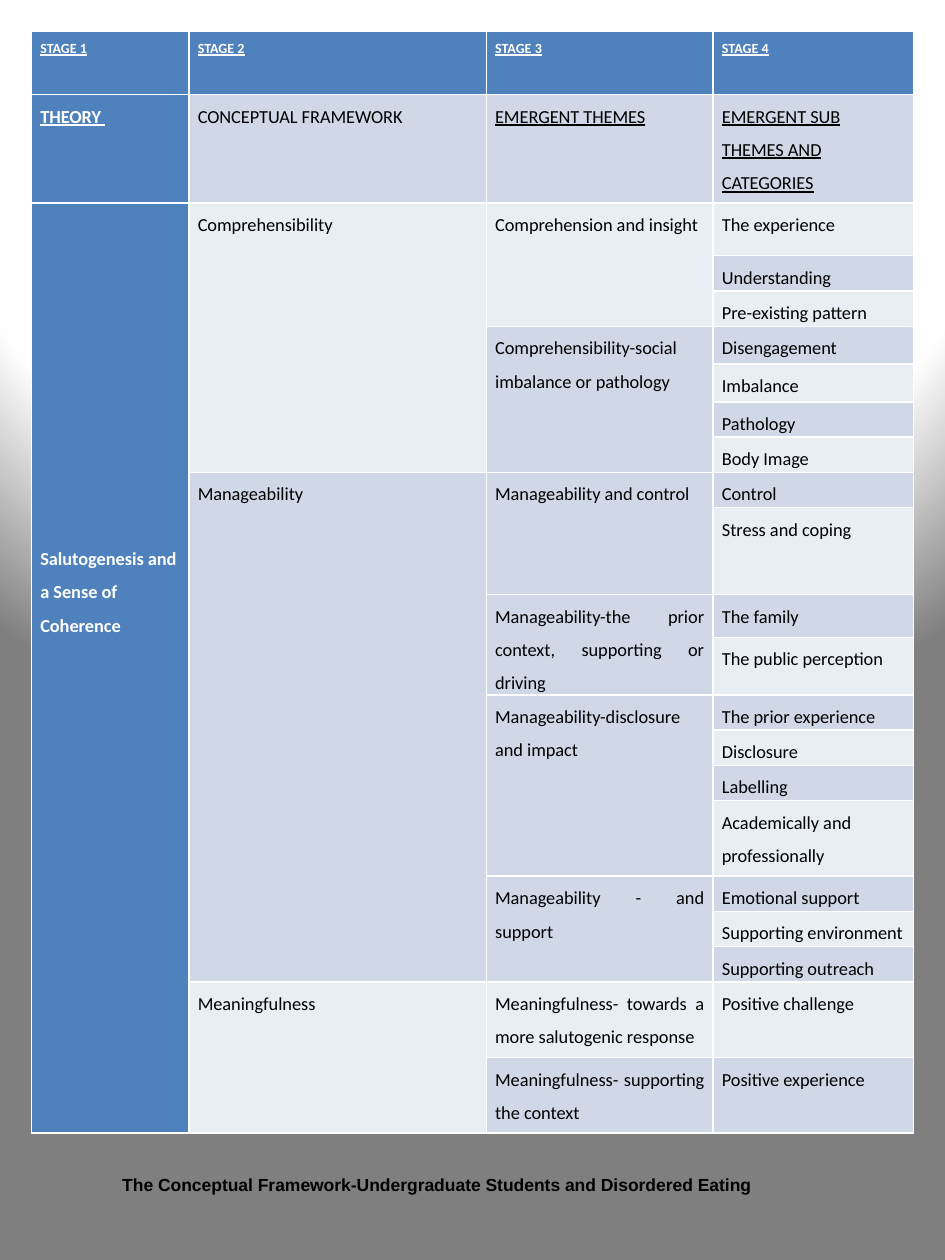
from pptx import Presentation
from pptx.dml.color import RGBColor
from pptx.enum import text
from pptx.oxml import parse_xml
from pptx.oxml.ns import nsdecls
from pptx.util import Inches, Pt

STAGES = ["STAGE 1", "STAGE 2", "STAGE 3", "STAGE 4"]
HEADS = ["THEORY ", "CONCEPTUAL FRAMEWORK", "EMERGENT THEMES",
         "EMERGENT SUB THEMES AND CATEGORIES"]
THEORY = "Salutogenesis and a Sense of Coherence"
# concept -> theme -> (sub-theme, row height)
TREE = {
    "Comprehensibility": {
        "Comprehension and insight": [
            ("The experience", 0.42), ("Understanding", 0.28),
            ("Pre-existing pattern", 0.28)],
        "Comprehensibility-social imbalance or pathology": [
            ("Disengagement", 0.3), ("Imbalance", 0.3),
            ("Pathology", 0.28), ("Body Image", 0.28)],
    },
    "Manageability": {
        "Manageability and control": [
            ("Control", 0.28), ("Stress and coping", 0.69)],
        "Manageability-the prior context, supporting or driving": [
            ("The family", 0.34), ("The public perception", 0.45)],
        "Manageability-disclosure and impact": [
            ("The prior experience", 0.28), ("Disclosure", 0.28),
            ("Labelling", 0.28), ("Academically and professionally", 0.6)],
        "Manageability - and support": [
            ("Emotional support", 0.28), ("Supporting environment", 0.28),
            ("Supporting outreach", 0.28)],
    },
    "Meaningfulness": {
        "Meaningfulness- towards a more salutogenic response": [
            ("Positive challenge", 0.6)],
        "Meaningfulness- supporting the context": [
            ("Positive experience", 0.6)],
    },
}
CAPTION = "The Conceptual Framework-Undergraduate Students and Disordered Eating"
WIDTHS = [1.25, 2.36, 1.8, 1.59]
LEFT_ALIGNED = {THEORY, HEADS[3], "Academically and professionally"}
BLUE, ODD, EVEN, WHITE, BLACK = "4F81BD", "D0D8E8", "E9EDF4", "FFFFFF", "000000"


def color(code):
    return RGBColor.from_string(code)


def style(para, size, name, code, bold, line=False):
    font = para.font
    font.size, font.name, font.bold = Pt(size), name, bold
    font.underline = line
    font.color.rgb = color(code)


def put(grid, row, col, words, span=1, line=False):
    """Fill one cell, merged down over span rows."""
    cell = grid.cell(row, col)
    if span > 1:
        cell.merge(grid.cell(row + span - 1, col))
    cell.text = words
    para = cell.text_frame.paragraphs[0]
    para.line_spacing = 1.5
    left = words in LEFT_ALIGNED
    para.alignment = text.PP_ALIGN.LEFT if left else text.PP_ALIGN.JUSTIFY
    dark = row == 0 or col == 0
    style(para, 8 if row == 0 else 10.5, "Calibri",
          WHITE if dark else BLACK, dark, line)
    cell.margin_left = cell.margin_right = Inches(0.07)
    cell.margin_top = cell.margin_bottom = 0
    cell.fill.solid()
    cell.fill.fore_color.rgb = color(BLUE if dark else ODD if row % 2 else EVEN)
    return cell


def shade(slide):
    """Give the slide a radial gradient background."""
    stops = "".join(
        f'<a:gs pos="{pos * 1000}"><a:srgbClr val="{code}"/></a:gs>'
        for pos, code in [(0, "FFFFFF"), (73, "FEFEFE"), (100, "7F7F7F")])
    slide.element.cSld.insert(0, parse_xml(
        f'<p:bg {nsdecls("p", "a")}><p:bgPr><a:gradFill rotWithShape="1">'
        f'<a:gsLst>{stops}</a:gsLst><a:path path="circle">'
        '<a:fillToRect l="50000" t="-80000" r="50000" b="180000"/></a:path>'
        '</a:gradFill><a:effectLst/></p:bgPr></p:bg>'))


def main():
    deck = Presentation()
    deck.slide_width, deck.slide_height = Inches(7.5), Inches(10)
    slide = deck.slides.add_slide(deck.slide_layouts[5])
    shade(slide)

    subs = [sub for themes in TREE.values()
            for group in themes.values() for sub in group]
    tall = [0.5, 0.86] + [high for _, high in subs]
    grid = slide.shapes.add_table(
        len(tall), len(WIDTHS), Inches(0.25), Inches(0.25),
        Inches(sum(WIDTHS)), Inches(sum(tall))).table
    for column, wide in zip(grid.columns, WIDTHS):
        column.width = Inches(wide)
    for line, high in zip(grid.rows, tall):
        line.height = Inches(high)

    for col, (stage, head) in enumerate(zip(STAGES, HEADS)):
        put(grid, 0, col, stage, line=True)
        put(grid, 1, col, head, line=col != 1)
    put(grid, 2, 0, THEORY, len(subs)).margin_top = Inches(2.65)
    row = 2
    for concept, themes in TREE.items():
        put(grid, row, 1, concept, sum(map(len, themes.values())))
        for theme, group in themes.items():
            put(grid, row, 2, theme, len(group))
            for sub, _ in group:
                put(grid, row, 3, sub)
                row += 1

    title = slide.shapes.title
    title.left, title.top = Inches(0.87), Inches(9.25)
    title.width, title.height = Inches(5.46), Inches(0.3)
    frame = title.text_frame
    frame.text = CAPTION
    frame.auto_size = text.MSO_AUTO_SIZE.NONE
    frame.vertical_anchor = text.MSO_ANCHOR.MIDDLE
    para = frame.paragraphs[0]
    para.alignment = text.PP_ALIGN.LEFT
    style(para, 10, "Arial", BLACK, True)

    deck.save("out.pptx")


if __name__ == "__main__":
    main()
